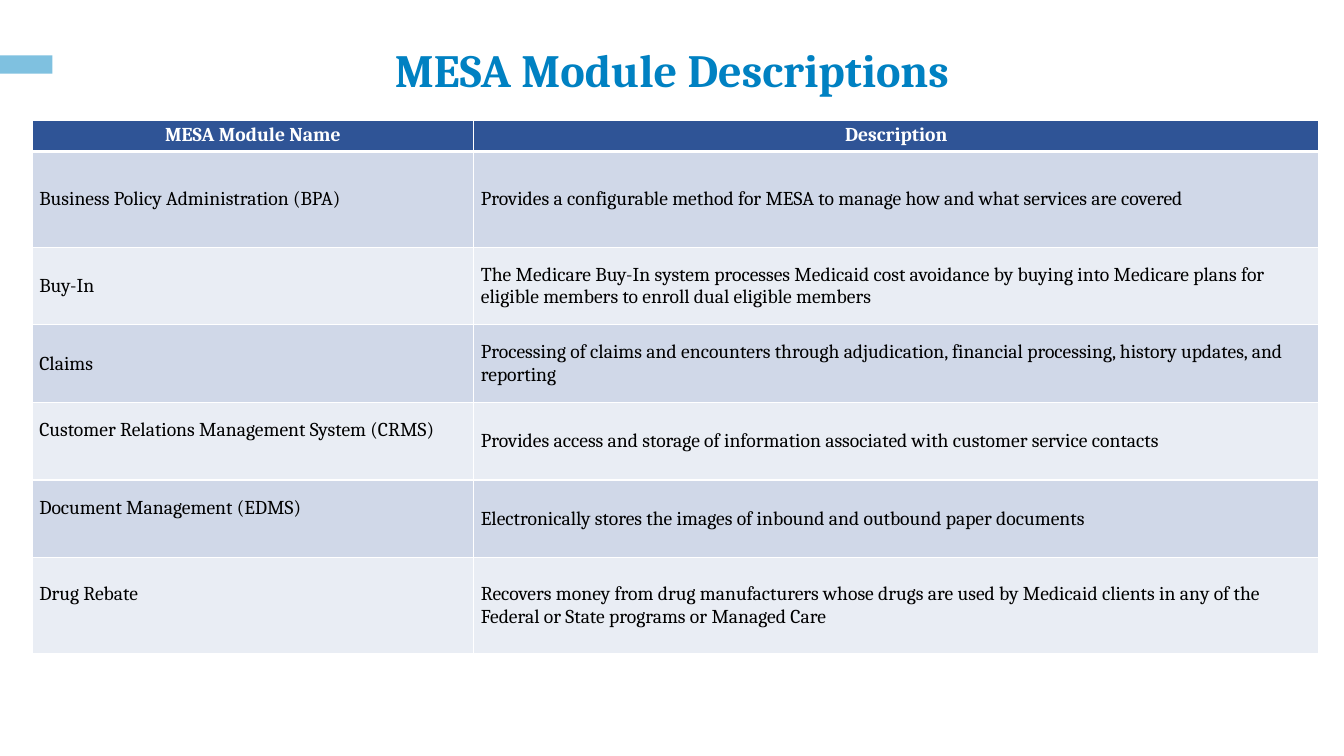
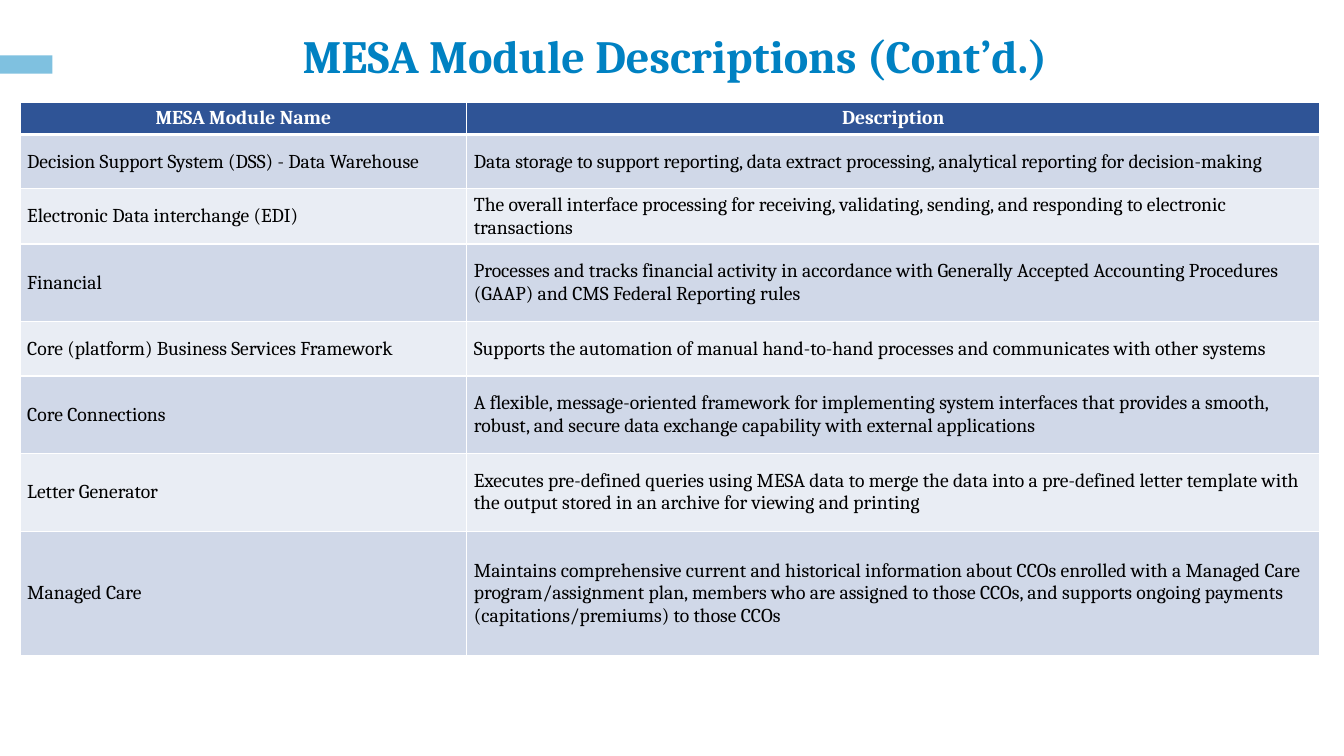
"""Build two slides of tables describing the MESA modules."""
from dataclasses import dataclass

from lxml import etree
from pptx import Presentation
from pptx.dml.color import RGBColor
from pptx.enum.shapes import MSO_SHAPE
from pptx.enum.text import MSO_ANCHOR, PP_ALIGN
from pptx.oxml.ns import qn
from pptx.util import Inches, Pt

RECTANGLE = MSO_SHAPE.RECTANGLE
TOP, MIDDLE = MSO_ANCHOR.TOP, MSO_ANCHOR.MIDDLE
LEFT, CENTER = PP_ALIGN.LEFT, PP_ALIGN.CENTER


@dataclass(frozen=True)
class Theme:
    """Colours, type and spacing shared by the slides."""
    font: str = "Cambria"
    title_size: int = 33
    table_size: int = 14
    title: str = "0081C2"
    accent: str = "7FC1E0"
    header: str = "2F5496"
    bands: tuple = ("D0D8E8", "E9EDF4")
    white: str = "FFFFFF"
    text: str = "000000"
    thin: int = 1
    thick: int = 3
    side_margin: float = 0.07
    edge_margin: float = 0.04
    raised_margin: float = 0.26


THEME = Theme()
HEADINGS = ("MESA Module Name", "Description")
SLIDES = [
    {
        "title": "MESA Module Descriptions",
        "title_at": (1.36, 0.34),
        "table_at": (0.32, 1.19),
        "columns": (4.38, 8.38),
        "heights": (0.31, 0.95, 0.77, 0.77, 0.77, 0.77, 0.95),
        "raised": ("Customer Relations Management System (CRMS)",
                   "Document Management (EDMS)", "Drug Rebate"),
        "modules": [
            ("Business Policy Administration (BPA)",
             "Provides a configurable method for MESA to manage how and what services are covered"),
            ("Buy-In",
             "The Medicare Buy-In system processes Medicaid cost avoidance by buying into "
             "Medicare plans for eligible members to enroll dual eligible members"),
            ("Claims",
             "Processing of claims and encounters through adjudication, financial processing, "
             "history updates, and reporting"),
            ("Customer Relations Management System (CRMS)",
             "Provides access and storage of information associated with customer service contacts"),
            ("Document Management (EDMS)",
             "Electronically stores the images of inbound and outbound paper documents"),
            ("Drug Rebate",
             "Recovers money from drug manufacturers whose drugs are used by Medicaid clients "
             "in any of the Federal or State programs or Managed Care"),
        ],
    },
    {
        "title": "MESA Module Descriptions (Cont’d.)",
        "title_at": (1.39, 0.21),
        "table_at": (0.2, 1.02),
        "columns": (4.43, 8.46),
        "heights": (0.31, 0.54, 0.54, 0.77, 0.54, 0.77, 0.77, 1.24),
        "raised": (),
        "modules": [
            ("Decision Support System (DSS) - Data Warehouse",
             "Data storage to support reporting, data extract processing, analytical reporting "
             "for decision-making"),
            ("Electronic Data interchange (EDI)",
             "The overall interface processing for receiving, validating, sending, and "
             "responding to electronic transactions"),
            ("Financial",
             "Processes and tracks financial activity in accordance with Generally Accepted "
             "Accounting Procedures (GAAP) and CMS Federal Reporting rules"),
            ("Core (platform) Business Services Framework",
             "Supports the automation of manual hand-to-hand processes and communicates with "
             "other systems"),
            ("Core Connections",
             "A flexible, message-oriented framework for implementing system interfaces that "
             "provides a smooth, robust, and secure data exchange capability with external "
             "applications"),
            ("Letter Generator",
             "Executes pre-defined queries using MESA data to merge the data into a pre-defined "
             "letter template with the output stored in an archive for viewing and printing"),
            ("Managed Care",
             "Maintains comprehensive current and historical information about CCOs enrolled "
             "with a Managed Care program/assignment plan, members who are assigned to those "
             "CCOs, and supports ongoing payments (capitations/premiums) to those CCOs"),
        ],
    },
]


def write_text(text_frame, text, size, color, bold, alignment):
    text_frame.text = text
    paragraph = text_frame.paragraphs[0]
    paragraph.alignment = alignment
    font = paragraph.runs[0].font
    font.name, font.size, font.bold = THEME.font, Pt(size), bold
    font.color.rgb = RGBColor.from_string(color)


def add_borders(cell, top, bottom):
    properties = cell._tc.get_or_add_tcPr()
    widths = {"a:lnL": THEME.thin, "a:lnR": THEME.thin, "a:lnT": top, "a:lnB": bottom}
    for tag, width in widths.items():
        line = etree.SubElement(properties, qn(tag), w=str(Pt(width)))
        fill = etree.SubElement(line, qn("a:solidFill"))
        etree.SubElement(fill, qn("a:srgbClr"), val=THEME.white)


presentation = Presentation()
presentation.slide_width, presentation.slide_height = Inches(13.33), Inches(7.5)
blank_layout = presentation.slide_layouts[6]

for content in SLIDES:
    slide = presentation.slides.add_slide(blank_layout)

    title_left, title_top = content["title_at"]
    title = slide.shapes.add_textbox(
        Inches(title_left), Inches(title_top), Inches(10.61), Inches(0.68))
    title.text_frame.word_wrap = True
    title.text_frame.vertical_anchor = MIDDLE
    write_text(title.text_frame, content["title"], THEME.title_size, THEME.title, True, CENTER)

    rows = [HEADINGS, *content["modules"]]
    table_left, table_top = content["table_at"]
    table = slide.shapes.add_table(
        len(rows), len(HEADINGS), Inches(table_left), Inches(table_top),
        Inches(sum(content["columns"])), Inches(sum(content["heights"]))).table
    for column, width in zip(table.columns, content["columns"]):
        column.width = Inches(width)

    for row_index, (row, height) in enumerate(zip(rows, content["heights"])):
        table.rows[row_index].height = Inches(height)
        is_header = row_index == 0
        fill_color = THEME.header if is_header else THEME.bands[(row_index - 1) % 2]
        for column_index, text in enumerate(row):
            cell = table.cell(row_index, column_index)
            add_borders(cell, THEME.thick if row_index == 1 else THEME.thin,
                        THEME.thick if is_header else THEME.thin)
            cell.fill.solid()
            cell.fill.fore_color.rgb = RGBColor.from_string(fill_color)
            cell.margin_left = cell.margin_right = Inches(THEME.side_margin)
            cell.margin_top = Inches(THEME.edge_margin)
            cell.margin_bottom = Inches(
                THEME.raised_margin if text in content["raised"] else THEME.edge_margin)
            cell.vertical_anchor = TOP if is_header else MIDDLE
            write_text(cell.text_frame, text, THEME.table_size,
                       THEME.white if is_header else THEME.text, is_header,
                       CENTER if is_header else LEFT)

    accent_bar = slide.shapes.add_shape(
        RECTANGLE, Inches(0), Inches(0.55), Inches(0.52), Inches(0.18))
    accent_bar.shadow.inherit = False
    accent_bar.fill.solid()
    accent_bar.fill.fore_color.rgb = RGBColor.from_string(THEME.accent)
    accent_bar.line.fill.background()

presentation.save("out.pptx")
